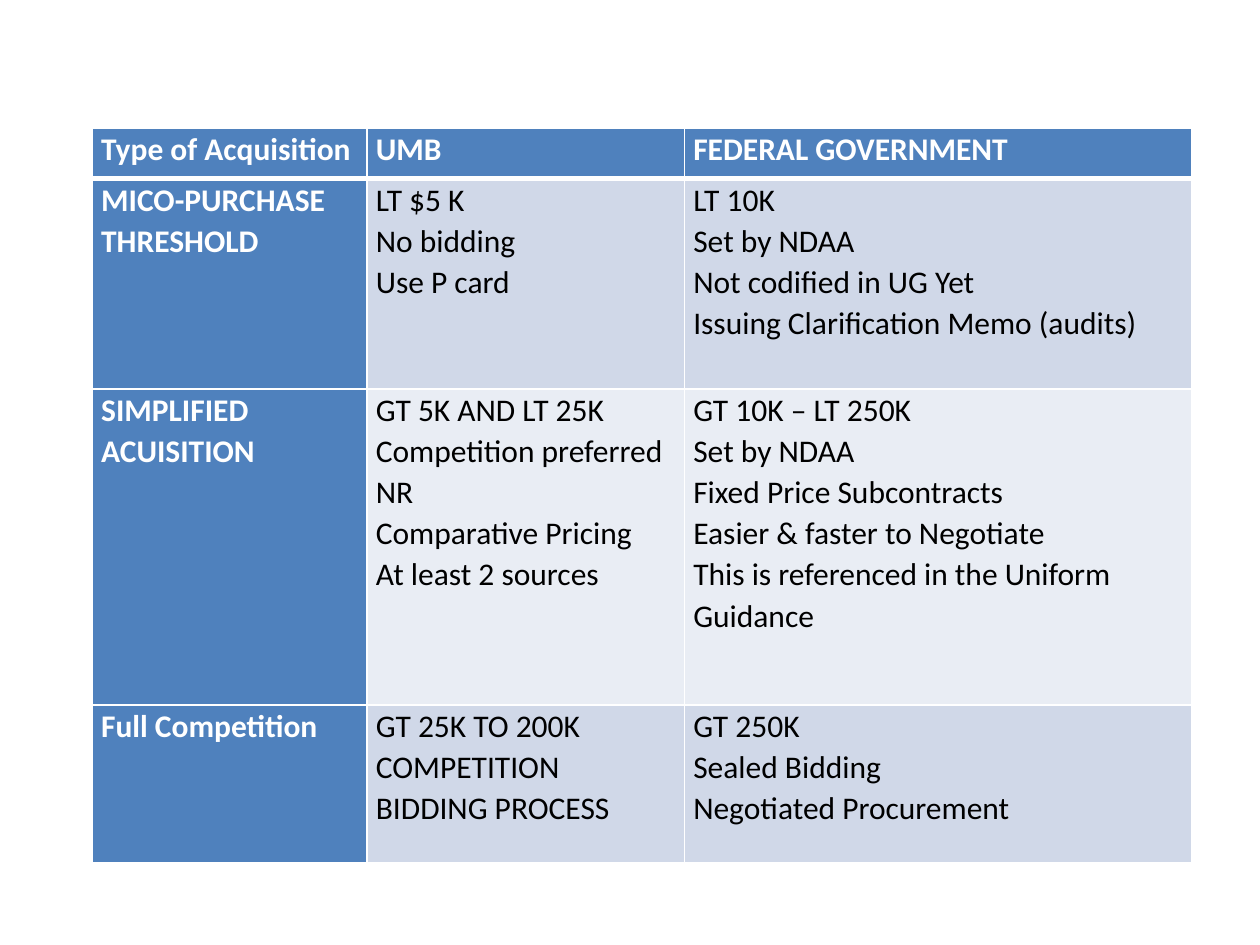
from dataclasses import dataclass

import lxml.etree
import pptx
import pptx.dml.color
import pptx.oxml.ns
import pptx.util
from pptx.util import Pt


@dataclass(frozen=True)
class Theme:
    font: str = "Calibri"
    size: float = 18
    line_spacing: float = 1.07
    header: str = "4F81BD"
    bands: tuple = ("D0D8E8", "E9EDF4")
    light: str = "FFFFFF"
    dark: str = "000000"


theme = Theme()


def rgb(value):
    return pptx.dml.color.RGBColor.from_string(value)


def add_border(cell, side, width):
    """Draw one side of a cell; side is L, R, T or B, width is in points."""
    qn = pptx.oxml.ns.qn
    properties = cell._tc.get_or_add_tcPr()
    line = lxml.etree.SubElement(properties, qn(f"a:ln{side}"), w=str(Pt(width)))
    fill = lxml.etree.SubElement(line, qn("a:solidFill"))
    lxml.etree.SubElement(fill, qn("a:srgbClr"), val=theme.light)


column_widths = [157, 181.4, 289.8]
row_heights = [28.8, 120.2, 180.7, 90]
content = [
    ["Type of Acquisition", "UMB", "FEDERAL GOVERNMENT"],
    [
        "MICO-PURCHASE\nTHRESHOLD",
        "LT $5 K\nNo bidding\nUse P card",
        "LT 10K\nSet by NDAA\nNot codified in UG Yet\nIssuing Clarification Memo (audits)",
    ],
    [
        "SIMPLIFIED ACUISITION",
        "GT 5K AND LT 25K\nCompetition preferred NR\nComparative Pricing\nAt least 2 sources",
        "GT 10K – LT 250K\nSet by NDAA\nFixed Price Subcontracts\n"
        "Easier & faster to Negotiate\nThis is referenced in the Uniform Guidance",
    ],
    [
        "Full Competition",
        "GT 25K TO 200K\nCOMPETITION\nBIDDING PROCESS",
        "GT 250K\nSealed Bidding\nNegotiated Procurement",
    ],
]

deck = pptx.Presentation()
deck.slide_width, deck.slide_height = Pt(720), Pt(540)
slide = deck.slides.add_slide(deck.slide_layouts[6])

table = slide.shapes.add_table(
    len(row_heights), len(column_widths),
    Pt(52.8), Pt(73.2), Pt(sum(column_widths)), Pt(sum(row_heights)),
).table
table.first_col = True
for column, width in zip(table.columns, column_widths):
    column.width = Pt(width)
for row, height in zip(table.rows, row_heights):
    row.height = Pt(height)

for row_index, row_texts in enumerate(content):
    for column_index, text in enumerate(row_texts):
        cell = table.cell(row_index, column_index)
        is_header = row_index == 0 or column_index == 0
        cell.margin_left = cell.margin_right = Pt(5)
        cell.margin_top = cell.margin_bottom = Pt(0)

        for side in "LRTB":
            under_header = (row_index, side) in ((0, "B"), (1, "T"))
            add_border(cell, side, 3 if under_header else 1)
        cell.fill.solid()
        band = theme.bands[(row_index - 1) % 2]
        cell.fill.fore_color.rgb = rgb(theme.header if is_header else band)

        cell.text_frame.text = text
        for para in cell.text_frame.paragraphs:
            para.line_spacing = theme.line_spacing
            for span in para.runs:
                span.font.name = theme.font
                span.font.size = Pt(theme.size)
                span.font.bold = is_header
                span.font.color.rgb = rgb(theme.light if is_header else theme.dark)

deck.save("out.pptx")
